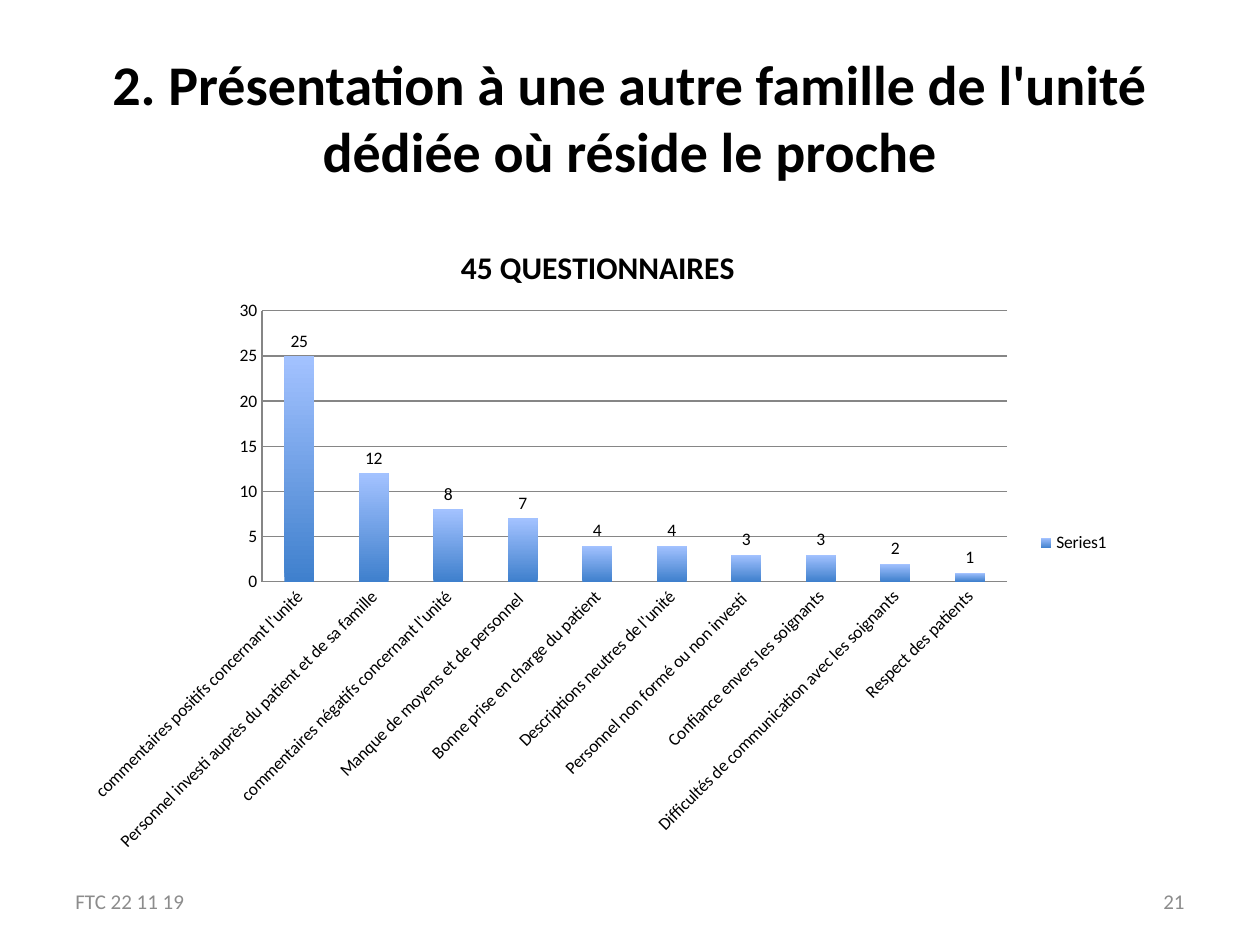
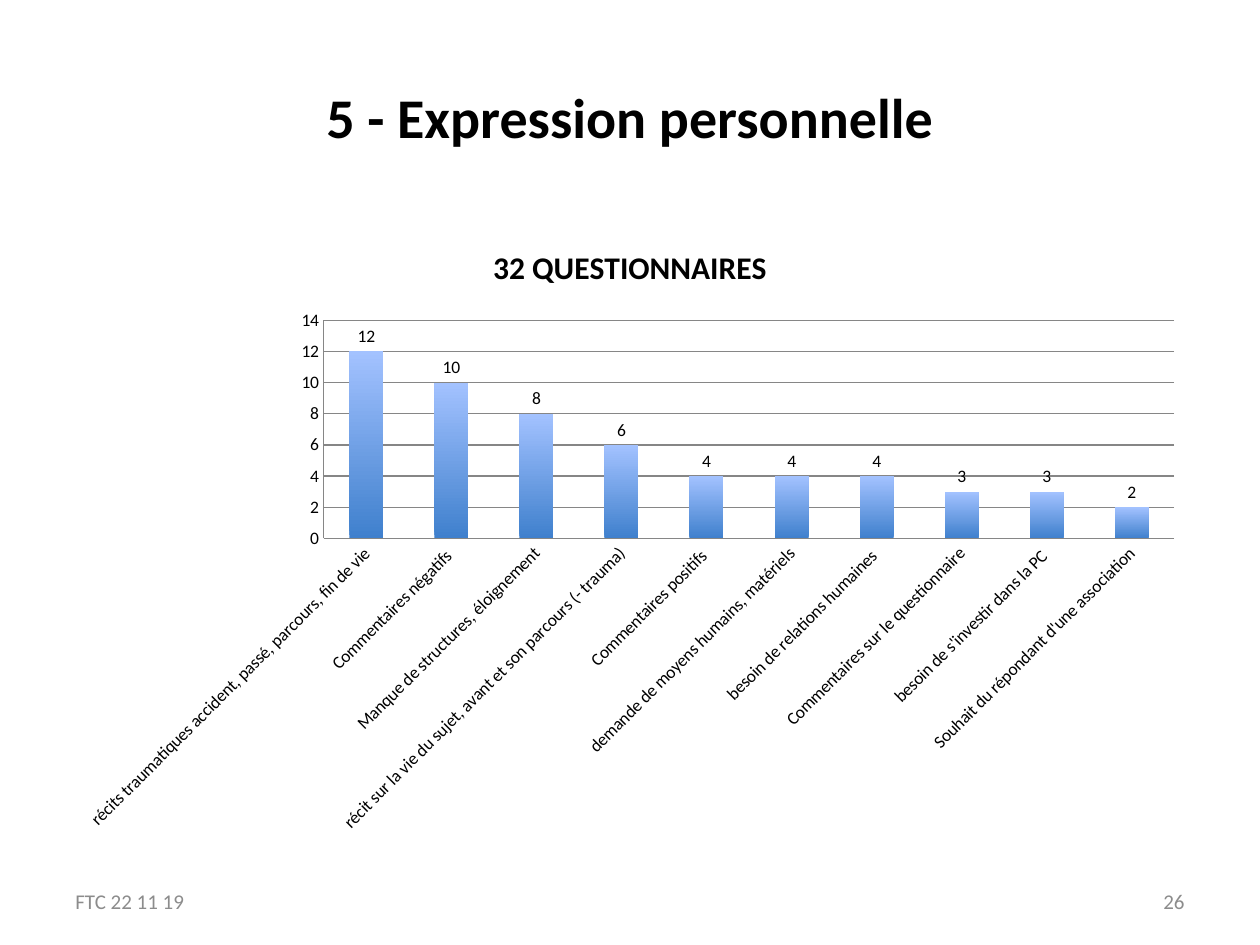
"""Build two slides of family questionnaire results, each with a column chart."""
from lxml import etree
from pptx import Presentation
from pptx.chart.data import CategoryChartData
from pptx.dml.color import RGBColor
from pptx.enum.chart import XL_CHART_TYPE as ChartType, XL_LABEL_POSITION as LabelPos
from pptx.enum.chart import XL_LEGEND_POSITION as LegendPos, XL_TICK_MARK as Tick
from pptx.enum.text import MSO_ANCHOR as Anchor, PP_ALIGN as Align
from pptx.oxml.ns import qn
from pptx.util import Pt

PX = 9144
FONT = "Calibri"
COLORS = {"text": "000000", "footer": "8C8C8C", "axis": "868686",
          "bar_top": "A3C2FF", "bar_bottom": "3F80CD"}
TITLE_BOX = (50, 30, 900, 125)
DATE_BOX = (50, 695, 233, 40)
NUMBER_BOX = (717, 695, 233, 40)

SLIDES = [
    dict(title="2. Présentation à une autre famille de l'unité dédiée où réside le proche",
         number=21, box=(58, 175, 833, 512), heading="45 QUESTIONNAIRES",
         series="Series1", legend=True, top=30, step=5,
         plot_area=dict(x=0.18, y=0.14, w=0.71, h=0.42),
         counts={"commentaires positifs concernant l'unité": 25,
                 "Personnel investi auprès du patient et de sa famille": 12,
                 "commentaires négatifs concernant l'unité": 8,
                 "Manque de moyens et de personnel ": 7,
                 "Bonne prise en charge du patient": 4,
                 "Descriptions neutres de l'unité": 4,
                 "Personnel non formé ou non investi ": 3,
                 "Confiance envers les soignants": 3,
                 "Difficultés de communication avec les soignants": 2,
                 "Respect des patients": 1}),
    dict(title="5 - Expression personnelle",
         number=26, box=(50, 175, 900, 495), heading="32 QUESTIONNAIRES",
         series="Series 1", legend=False, top=14, step=2,
         plot_area=dict(x=0.23, y=0.16, w=0.75, h=0.35),
         counts={"récits traumatiques accident, passé, parcours, fin de vie": 12,
                 "Commentaires négatifs ": 10,
                 "Manque de structures, éloignement": 8,
                 "récit sur la vie du sujet, avant et son parcours (- trauma)": 6,
                 "Commentaires positifs ": 4,
                 "demande de moyens humains, matériels": 4,
                 "besoin de relations humaines ": 4,
                 "Commentaires sur le questionnaire": 3,
                 "besoin de s'investir dans la PC ": 3,
                 "Souhait du répondant d'une association": 2}),
]


def color(name):
    """Return the named palette colour."""
    return RGBColor.from_string(COLORS[name])


def emu(box):
    """Scale a px box to EMU."""
    return [length * PX for length in box]


def style_font(font, size, ink="text", bold=False):
    """Apply the shared typeface with a size, colour and weight."""
    font.name, font.size, font.bold = FONT, Pt(size), bold
    font.color.rgb = color(ink)


def add_text(slide, box, text, align=Align.LEFT, **font_format):
    """Add a wrapped, vertically centred text box."""
    frame = slide.shapes.add_textbox(*emu(box)).text_frame
    frame.word_wrap = True
    frame.vertical_anchor = Anchor.MIDDLE
    paragraph = frame.paragraphs[0]
    paragraph.alignment = align
    run = paragraph.add_run()
    run.text = text
    style_font(run.font, **font_format)


def place_plot(chart, fractions):
    """Fix the inner plot area to fractions of the chart box."""
    area = chart._chartSpace.find(".//" + qn("c:plotArea"))
    for automatic in area.findall(qn("c:layout")):
        area.remove(automatic)
    layout = etree.Element(qn("c:layout"))
    area.insert(0, layout)
    manual = etree.SubElement(layout, qn("c:manualLayout"))
    settings = {"layoutTarget": "inner", "xMode": "edge", "yMode": "edge", **fractions}
    for tag, value in settings.items():
        etree.SubElement(manual, qn("c:" + tag)).set("val", str(value))


def style_axes(chart, top, step):
    """Set the count scale, gridlines and slanted category labels."""
    categories, counts = chart.category_axis, chart.value_axis
    counts.minimum_scale, counts.maximum_scale, counts.major_unit = 0, top, step
    counts.has_major_gridlines = True
    for axis in (categories, counts):
        axis.major_tick_mark = axis.minor_tick_mark = Tick.NONE
        style_font(axis.tick_labels.font, 10)
    for part in (categories, counts, counts.major_gridlines):
        part.format.line.color.rgb = color("axis")
        part.format.line.width = Pt(0.75)
    slant = categories._element.find(qn("c:txPr")).find(qn("a:bodyPr"))
    slant.set("rot", "-2700000")
    slant.set("vert", "horz")


def style_bars(plot):
    """Give the columns their gradient and value labels."""
    plot.gap_width = 150
    plot.vary_by_categories = False
    fill = plot.series[0].format.fill
    fill.gradient()
    fill.gradient_angle = 90
    for stop, name in zip(fill.gradient_stops, ("bar_bottom", "bar_top")):
        stop.color.rgb = color(name)
    plot.has_data_labels = True
    plot.data_labels.show_value = True
    plot.data_labels.position = LabelPos.OUTSIDE_END
    style_font(plot.data_labels.font, 10)


def add_counts_chart(slide, box, heading, series, counts, legend, top, step, plot_area):
    """Add the column chart of comment counts."""
    data = CategoryChartData()
    data.categories = list(counts)
    data.add_series(series, list(counts.values()))
    chart = slide.shapes.add_chart(ChartType.COLUMN_CLUSTERED, *emu(box), data).chart
    style_font(chart.font, 10)
    chart.has_title = True
    chart.chart_title.include_in_layout = False
    chart.chart_title.text_frame.text = heading
    style_font(chart.chart_title.text_frame.paragraphs[0].runs[0].font, 18, bold=True)
    chart.has_legend = legend
    if legend:
        chart.legend.position = LegendPos.RIGHT
        chart.legend.include_in_layout = False
        style_font(chart.legend.font, 10)
    style_axes(chart, top, step)
    style_bars(chart.plots[0])
    place_plot(chart, plot_area)


def add_results_slide(deck, title, number, **chart_parts):
    """Add one slide with its title, chart and footer."""
    slide = deck.slides.add_slide(deck.slide_layouts[6])
    add_text(slide, TITLE_BOX, title, Align.CENTER, size=32, bold=True)
    add_counts_chart(slide, **chart_parts)
    add_text(slide, NUMBER_BOX, str(number), Align.RIGHT, size=12, ink="footer")
    add_text(slide, DATE_BOX, "FTC 22 11 19", size=12, ink="footer")


def main():
    """Build and save the deck."""
    deck = Presentation()
    deck.slide_width, deck.slide_height = emu((1000, 750))
    for content in SLIDES:
        add_results_slide(deck, **content)
    deck.save("out.pptx")


if __name__ == "__main__":
    main()
